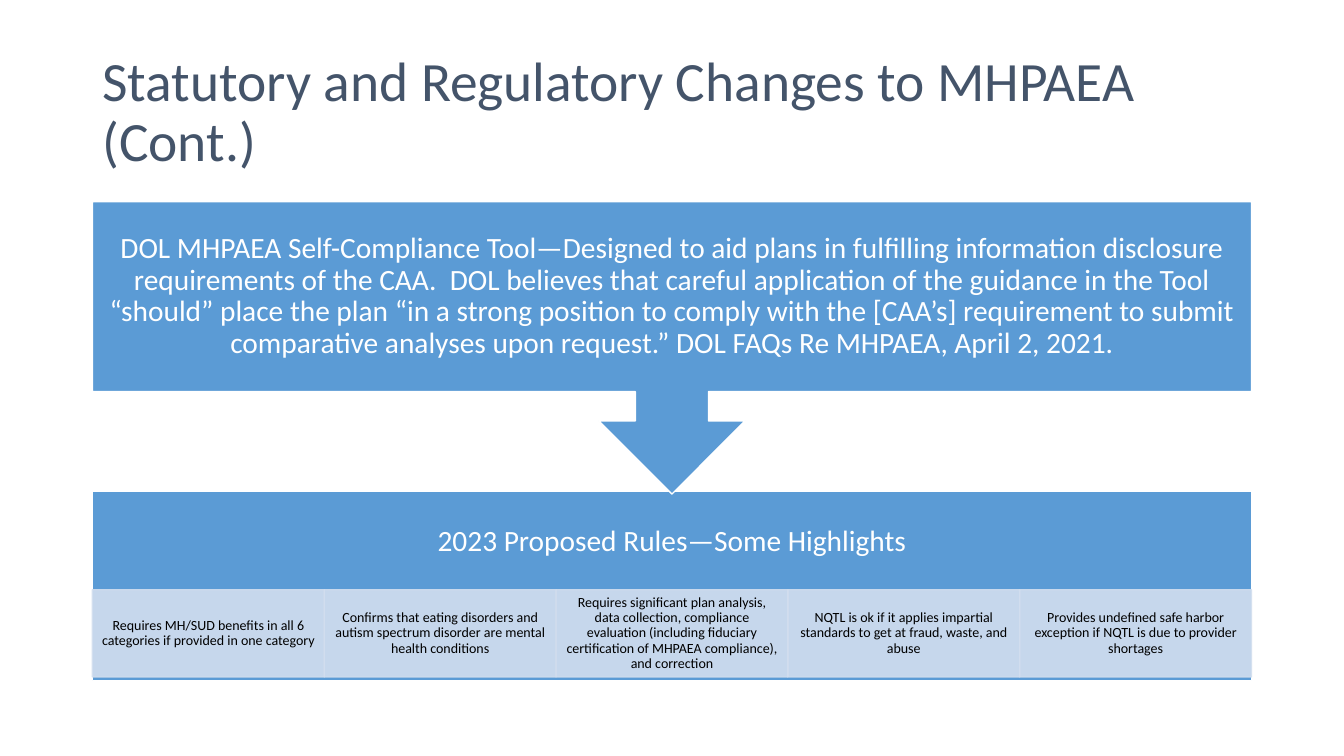
from lxml import etree
from pptx import Presentation
from pptx.dml.color import RGBColor
from pptx.enum.shapes import MSO_SHAPE
from pptx.enum.text import MSO_ANCHOR, PP_ALIGN
from pptx.oxml.ns import qn
from pptx.util import Cm, Pt

RECTANGLE = MSO_SHAPE.RECTANGLE
ARROW_CALLOUT = MSO_SHAPE.DOWN_ARROW_CALLOUT
MIDDLE = MSO_ANCHOR.MIDDLE
LEFT, CENTER = PP_ALIGN.LEFT, PP_ALIGN.CENTER

TITLE = "Statutory and Regulatory Changes to MHPAEA (Cont.)"
TOOL = (
    "DOL MHPAEA Self-Compliance Tool—Designed to aid plans in fulfilling information "
    "disclosure requirements of the CAA.  DOL believes that careful application of the "
    "guidance in the Tool “should” place the plan “in a strong position to comply with "
    "the [CAA’s] requirement to submit comparative analyses upon request.” DOL FAQs Re "
    "MHPAEA, April 2, 2021."
)
RULES_HEADING = "2023 Proposed Rules—Some Highlights"
HIGHLIGHTS = [
    "Requires MH/SUD benefits in all 6 categories if provided in one category",
    "Confirms that eating disorders and autism spectrum disorder are mental health conditions",
    "Requires significant plan analysis, data collection, compliance evaluation (including "
    "fiduciary certification of MHPAEA compliance), and correction",
    "NQTL is ok if it applies impartial standards to get at fraud, waste, and abuse",
    "Provides undefined safe harbor exception if NQTL is due to provider shortages",
]

COLORS = {
    "title": "44546A",
    "blue": "5B9BD5",
    "pale": "D2DEEF",
    "white": "FFFFFF",
    "black": "000000",
}
FONT = "Calibri"
MARGIN, WIDTH = 2.33, 29.21
RULES_TOP, HIGHLIGHTS_TOP = 12.37, 14.86


def color(name):
    return RGBColor.from_string(COLORS[name])


def write(holder, text, size, color_name, align=CENTER, insets=(0.41, 0.41)):
    frame = holder.text_frame
    frame.text = text
    frame.word_wrap = True
    frame.vertical_anchor = MIDDLE
    frame.margin_left = frame.margin_right = Cm(insets[0])
    frame.margin_top = frame.margin_bottom = Cm(insets[1])
    paragraph = frame.paragraphs[0]
    paragraph.alignment = align
    paragraph.line_spacing = 0.9
    font = paragraph.runs[0].font
    font.name, font.size = FONT, Pt(size)
    font.color.rgb = color(color_name)


def add_block(slide, kind, box, fill, line, opacity=100):
    block = slide.shapes.add_shape(kind, *map(Cm, box))
    block.shadow.inherit = False
    block.fill.solid()
    block.fill.fore_color.rgb = color(fill)
    block.line.color.rgb = color(line)
    block.line.width = Pt(1)
    if opacity < 100:
        for tint in block.fill._xPr.iter(qn("a:srgbClr")):
            etree.SubElement(tint, qn("a:alpha"), val=str(opacity * 1000))
    return block


def main():
    deck = Presentation()
    deck.slide_width, deck.slide_height = Cm(33.87), Cm(19.05)
    slide = deck.slides.add_slide(deck.slide_layouts[5])

    title = slide.shapes.title
    title.left, title.top, title.width, title.height = map(Cm, (MARGIN, 1.02, WIDTH, 3.68))
    write(title, TITLE, 39.6, "title", LEFT, (0.25, 0.13))

    add_block(slide, RECTANGLE, (MARGIN, RULES_TOP, WIDTH, 4.78), "blue", "white")
    heading = slide.shapes.add_textbox(*map(Cm, (MARGIN, RULES_TOP, WIDTH, 2.59)))
    write(heading, RULES_HEADING, 21, "white")

    step = WIDTH / len(HIGHLIGHTS)
    for index, highlight in enumerate(HIGHLIGHTS):
        box = (MARGIN + index * step, HIGHLIGHTS_TOP, step, 2.2)
        cell = add_block(slide, RECTANGLE, box, "pale", "pale", 90)
        write(cell, highlight, 10, "black", insets=(0.2, 0.03))

    tool = add_block(slide, ARROW_CALLOUT, (MARGIN, 5.08, WIDTH, 7.37), "blue", "white")
    write(tool, TOOL, 21, "white")

    deck.save("out.pptx")


if __name__ == "__main__":
    main()
